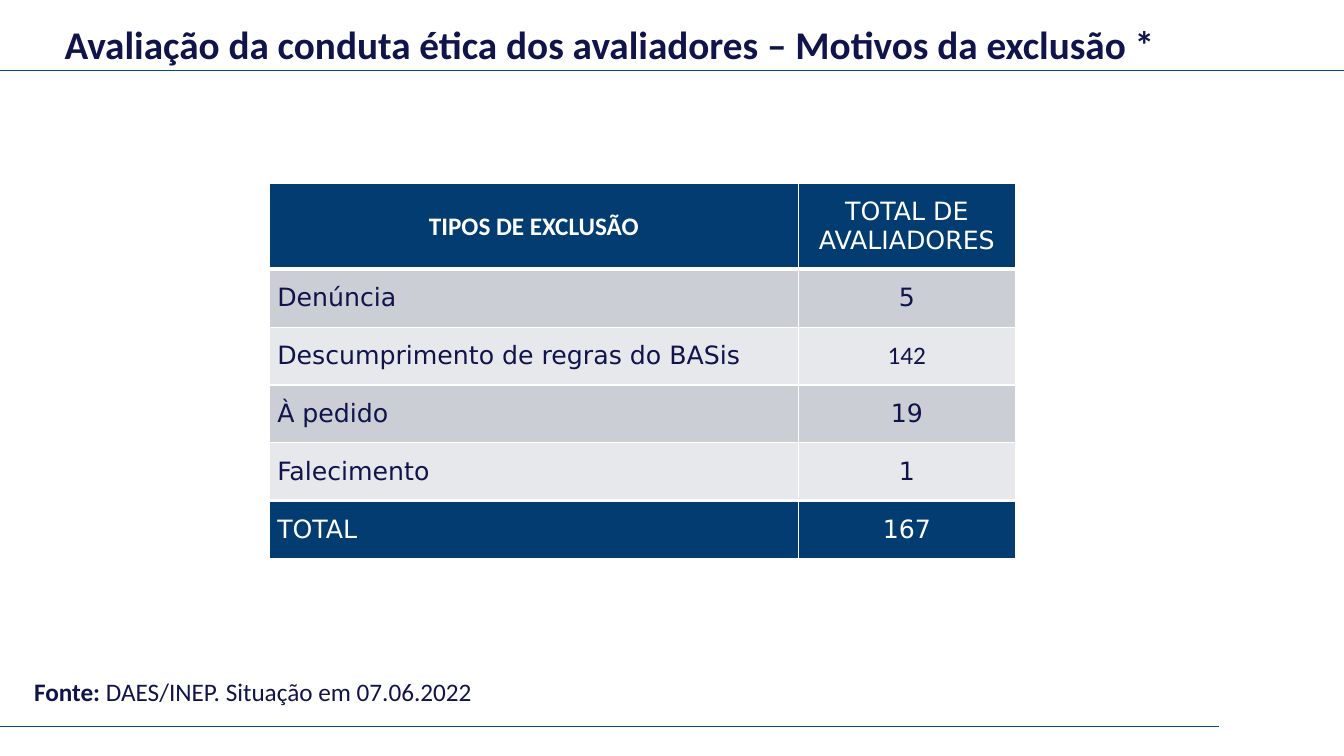
from dataclasses import dataclass

from lxml.etree import SubElement
from pptx import Presentation
from pptx.dml.color import RGBColor
from pptx.enum.shapes import MSO_CONNECTOR
from pptx.enum.text import MSO_ANCHOR, MSO_AUTO_SIZE, PP_ALIGN
from pptx.oxml.ns import qn
from pptx.util import Emu, Inches, Pt


@dataclass(frozen=True)
class Theme:
    ink: str = "11144B"
    rule: str = "044785"
    band: str = "023C71"
    stripes: tuple = ("CCCED5", "E7E8EB")
    white: str = "FFFFFF"
    text_font: str = "Calibri"
    table_font: str = "DejaVu Sans"
    title_size: int = 28
    body_size: int = 18
    thin: float = 1
    thick: float = 3


def assign(target, **values):
    for name, value in values.items():
        setattr(target, name, value)


class SlideBuilder:
    """Places elements by percentages of the slide's width and height."""

    def __init__(self, deck, theme):
        self.deck, self.theme = deck, theme
        self.page = deck.slides.add_slide(deck.slide_layouts[5])

    def across(self, share):
        return Emu(round(self.deck.slide_width * share / 100))

    def down(self, share):
        return Emu(round(self.deck.slide_height * share / 100))

    def area(self, left, top, width, height):
        return (self.across(left), self.down(top),
                self.across(width), self.down(height))

    def span(self, para, text, color, size=None, font=None, bold=False):
        span = para.add_run()
        span.text = text
        assign(span.font, name=font or self.theme.text_font,
               size=Pt(size or self.theme.body_size), bold=bold)
        span.font.color.rgb = RGBColor.from_string(color)

    def title(self, text, area):
        box = self.page.shapes.title
        assign(box, **dict(zip(("left", "top", "width", "height"), self.area(*area))))
        assign(box.text_frame, word_wrap=True, vertical_anchor=MSO_ANCHOR.TOP,
               auto_size=MSO_AUTO_SIZE.NONE)
        para = box.text_frame.paragraphs[0]
        para.alignment = PP_ALIGN.LEFT
        self.span(para, text, self.theme.ink, self.theme.title_size, bold=True)

    def rule(self, top, width):
        line = self.page.shapes.add_connector(
            MSO_CONNECTOR.STRAIGHT, 0, self.down(top), self.across(width), self.down(top))
        line.line.color.rgb = RGBColor.from_string(self.theme.rule)
        line.line.width = Pt(0.5)
        SubElement(line.element.spPr, qn("a:effectLst"))

    def source(self, label, text, area):
        frame = self.page.shapes.add_textbox(*self.area(*area)).text_frame
        frame.word_wrap = True
        para = frame.paragraphs[0]
        self.span(para, label, self.theme.ink, bold=True)
        self.span(para, text, self.theme.ink)

    def borders(self, cell, **widths):
        for side, width in widths.items():
            edge = SubElement(cell._tc.get_or_add_tcPr(), qn(f"a:ln{side}"),
                              w=str(Pt(width)))
            fill = SubElement(edge, qn("a:solidFill"))
            SubElement(fill, qn("a:srgbClr"), val=self.theme.white)

    def table(self, rows, left, top, widths, header_height, row_height, calibri_cells):
        theme, last = self.theme, len(rows) - 1
        heights = [header_height] + [row_height] * last
        grid = self.page.shapes.add_table(
            len(rows), len(widths),
            *self.area(left, top, sum(widths), sum(heights))).table
        for column, width in zip(grid.columns, widths):
            column.width = self.across(width)
        for r, values in enumerate(rows):
            grid.rows[r].height = self.down(heights[r])
            solid = r in (0, last)
            fill = theme.band if solid else theme.stripes[(r - 1) % 2]
            for c, value in enumerate(values):
                cell = grid.cell(r, c)
                self.borders(cell, L=theme.thin, R=theme.thin,
                             T=theme.thick if r in (1, last) else theme.thin,
                             B=theme.thick if r in (0, last - 1) else theme.thin)
                cell.fill.solid()
                cell.fill.fore_color.rgb = RGBColor.from_string(fill)
                assign(cell, vertical_anchor=MSO_ANCHOR.MIDDLE,
                       margin_left=Inches(0.08), margin_right=Inches(0.08),
                       margin_top=Inches(0.04), margin_bottom=Inches(0.04))
                para = cell.text_frame.paragraphs[0]
                para.alignment = PP_ALIGN.CENTER if r == 0 or c else PP_ALIGN.LEFT
                font = theme.text_font if (r, c) in calibri_cells else theme.table_font
                self.span(para, value, theme.white if solid else theme.ink,
                          font=font, bold=(r, c) == (0, 0))


def main():
    deck = Presentation()
    assign(deck, slide_width=Inches(13.33), slide_height=Inches(7.5))
    slide = SlideBuilder(deck, Theme())
    slide.rule(top=96.13, width=90.7)
    slide.rule(top=9.33, width=100)
    slide.title("Avaliação da conduta ética dos avaliadores – Motivos da exclusão *",
                (4.05, 2, 90.55, 7.6))
    exclusions = [
        ("TIPOS DE EXCLUSÃO", "TOTAL DE AVALIADORES"),
        ("Denúncia", "5"),
        ("Descumprimento de regras do BASis", "142"),
        ("À pedido", "19"),
        ("Falecimento", "1"),
        ("TOTAL", "167"),
    ]
    slide.table(exclusions, left=20.03, top=24.3, widths=(39.38, 16.13),
                header_height=11.33, row_height=7.65,
                calibri_cells={(0, 0), (2, 1)})
    slide.source("Fonte: ", "DAES/INEP. Situação em 07.06.2022",
                 (1.8, 88.8, 60.77, 5.33))
    deck.save("out.pptx")


if __name__ == "__main__":
    main()
